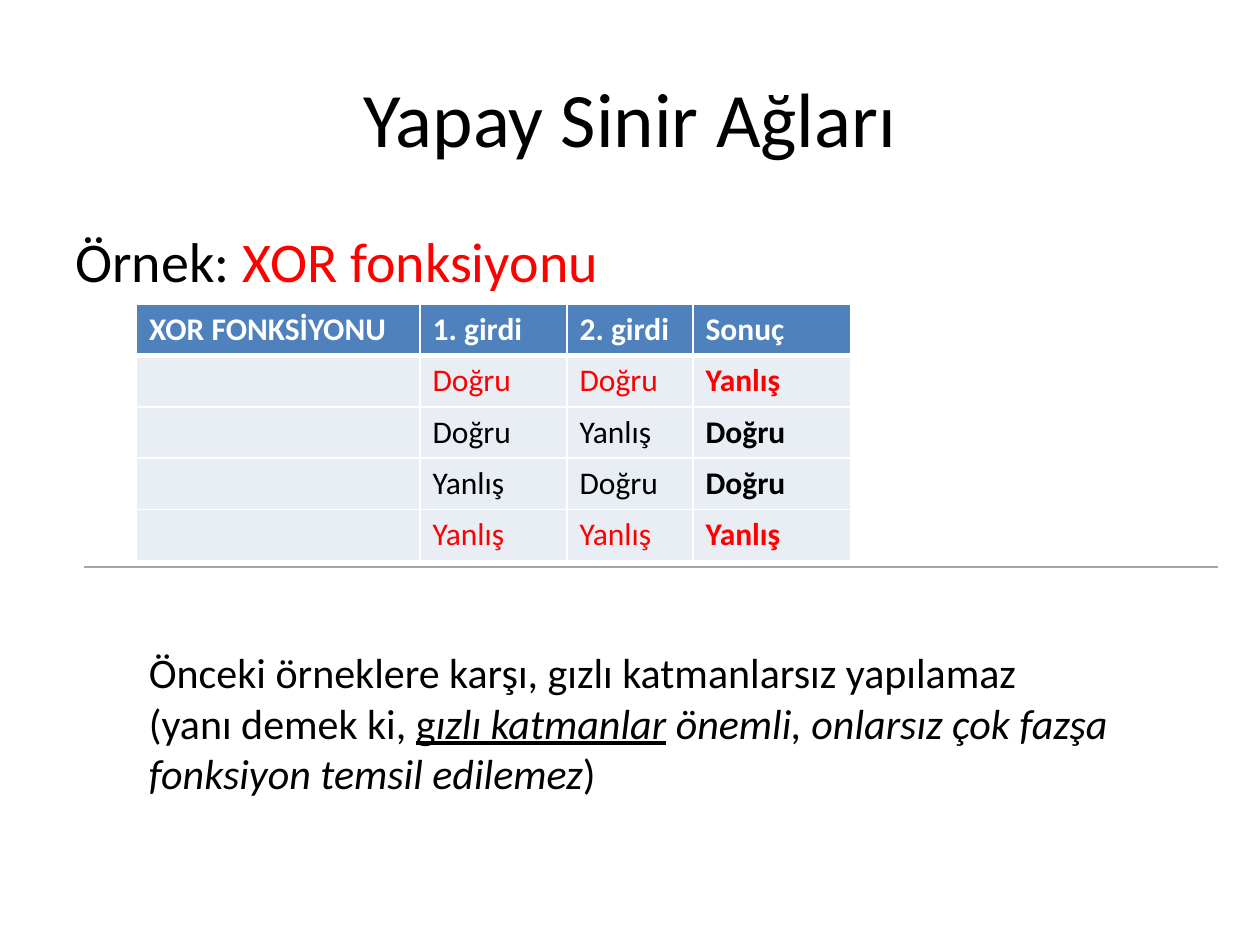
from dataclasses import dataclass

from lxml import etree
from pptx import Presentation
from pptx.dml.color import RGBColor
from pptx.enum.shapes import MSO_CONNECTOR
from pptx.enum.text import MSO_ANCHOR, PP_ALIGN
from pptx.oxml.ns import qn
from pptx.util import Inches, Pt

STRAIGHT = MSO_CONNECTOR.STRAIGHT
MIDDLE, TOP = MSO_ANCHOR.MIDDLE, MSO_ANCHOR.TOP
CENTER, LEFT = PP_ALIGN.CENTER, PP_ALIGN.LEFT

UNITS_PER_INCH = 12
PAGE_COLUMNS, PAGE_ROWS = 120, 90


@dataclass(frozen=True)
class Theme:
    font: str = "Calibri"
    title_size: int = 44
    lead_size: int = 32
    note_size: int = 24
    table_size: int = 18
    ink: str = "000000"
    accent: str = "FF0000"
    paper: str = "FFFFFF"
    header: str = "4F81BD"
    band: str = "E9EDF4"
    rule: str = "A6A6A6"
    rule_width: float = 0.75
    border_width: int = 1
    header_border_width: int = 3


THEME = Theme()

TRUTH_TABLE = [
    ["XOR FONKSİYONU", "1. girdi", "2. girdi", "Sonuç"],
    ["", "Doğru", "Doğru", "Yanlış"],
    ["", "Doğru", "Yanlış", "Doğru"],
    ["", "Yanlış", "Doğru", "Doğru"],
    ["", "Yanlış", "Yanlış", "Yanlış"],
]
TABLE_COLUMNS = [27, 14, 12, 15]
TABLE_ROW = 4.88


def grid(units):
    return Inches(units / UNITS_PER_INCH)


def style_font(font, size, color=THEME.ink, bold=False):
    font.name = THEME.font
    font.size = Pt(size)
    font.bold = bold
    font.color.rgb = RGBColor.from_string(color)


def add_text(page, area, size, align=LEFT, anchor=TOP):
    box = page.shapes.add_textbox(*map(grid, area))
    frame = box.text_frame
    frame.word_wrap = True
    frame.vertical_anchor = anchor
    para = frame.paragraphs[0]
    para.alignment = align
    style_font(para.font, size)
    return para


def add_span(para, text, color=None, italic=None, underline=None):
    span = para.add_run()
    span.text = text
    span.font.italic = italic
    span.font.underline = underline
    if color:
        span.font.color.rgb = RGBColor.from_string(color)


def set_borders(cell, widths):
    properties = cell._tc.get_or_add_tcPr()
    for side, width in widths.items():
        line = etree.SubElement(properties, qn(f"a:ln{side}"), w=str(Pt(width)))
        fill = etree.SubElement(line, qn("a:solidFill"))
        etree.SubElement(fill, qn("a:srgbClr"), val=THEME.paper)


def fill_cell(cell, text, row, column):
    is_header = row == 0
    is_result = column == len(TABLE_COLUMNS) - 1
    thin, thick = THEME.border_width, THEME.header_border_width
    set_borders(cell, {
        "L": thin,
        "R": thin,
        "T": thick if row == 1 else thin,
        "B": thick if is_header else thin,
    })
    cell.fill.solid()
    cell.fill.fore_color.rgb = RGBColor.from_string(
        THEME.header if is_header else THEME.band)
    cell.text = text
    inputs_agree = TRUTH_TABLE[row][1] == TRUTH_TABLE[row][2]
    if is_header:
        color = THEME.paper
    else:
        color = THEME.accent if inputs_agree else THEME.ink
    style_font(cell.text_frame.paragraphs[0].font, THEME.table_size, color,
               bold=is_header or is_result)


def add_truth_table(page, left, top):
    row_count, column_count = len(TRUTH_TABLE), len(TABLE_COLUMNS)
    table = page.shapes.add_table(
        row_count, column_count, grid(left), grid(top),
        grid(sum(TABLE_COLUMNS)), grid(TABLE_ROW * row_count)).table
    for column, width in zip(table.columns, TABLE_COLUMNS):
        column.width = grid(width)
    for row, texts in enumerate(TRUTH_TABLE):
        table.rows[row].height = grid(TABLE_ROW)
        for column, text in enumerate(texts):
            fill_cell(table.cell(row, column), text, row, column)


def add_rule(page, left, right, top):
    rule = page.shapes.add_connector(
        STRAIGHT, grid(left), grid(top), grid(right), grid(top))
    rule.line.color.rgb = RGBColor.from_string(THEME.rule)
    rule.line.width = Pt(THEME.rule_width)
    etree.SubElement(rule._element.spPr, qn("a:effectLst"))


def main():
    deck = Presentation()
    deck.slide_width, deck.slide_height = grid(PAGE_COLUMNS), grid(PAGE_ROWS)
    page = deck.slides.add_slide(deck.slide_layouts[6])

    title = add_text(page, (6, 3.6, 108, 15), THEME.title_size, CENTER, MIDDLE)
    add_span(title, "Yapay Sinir Ağları")

    lead = add_text(page, (6, 21, 108, 64), THEME.lead_size)
    lead.space_before = Pt(THEME.lead_size * 0.2)
    add_span(lead, "Örnek: ")
    add_span(lead, "XOR fonksiyonu", color=THEME.accent)

    add_truth_table(page, 13, 29)

    note = add_text(page, (13, 61, 95, 15.7), THEME.note_size)
    add_span(note, "Önceki örneklere karşı, gızlı katmanlarsız yapılamaz ")
    note.add_line_break()
    add_span(note, "(yanı demek ki, ")
    add_span(note, "g", underline=True)
    add_span(note, "ızlı katmanlar", italic=True, underline=True)
    add_span(note, " önemli, onlarsız çok fazşa fonksiyon temsil edilemez",
             italic=True)
    add_span(note, ")")

    add_rule(page, 8, 116, 54)
    deck.save("out.pptx")


if __name__ == "__main__":
    main()
